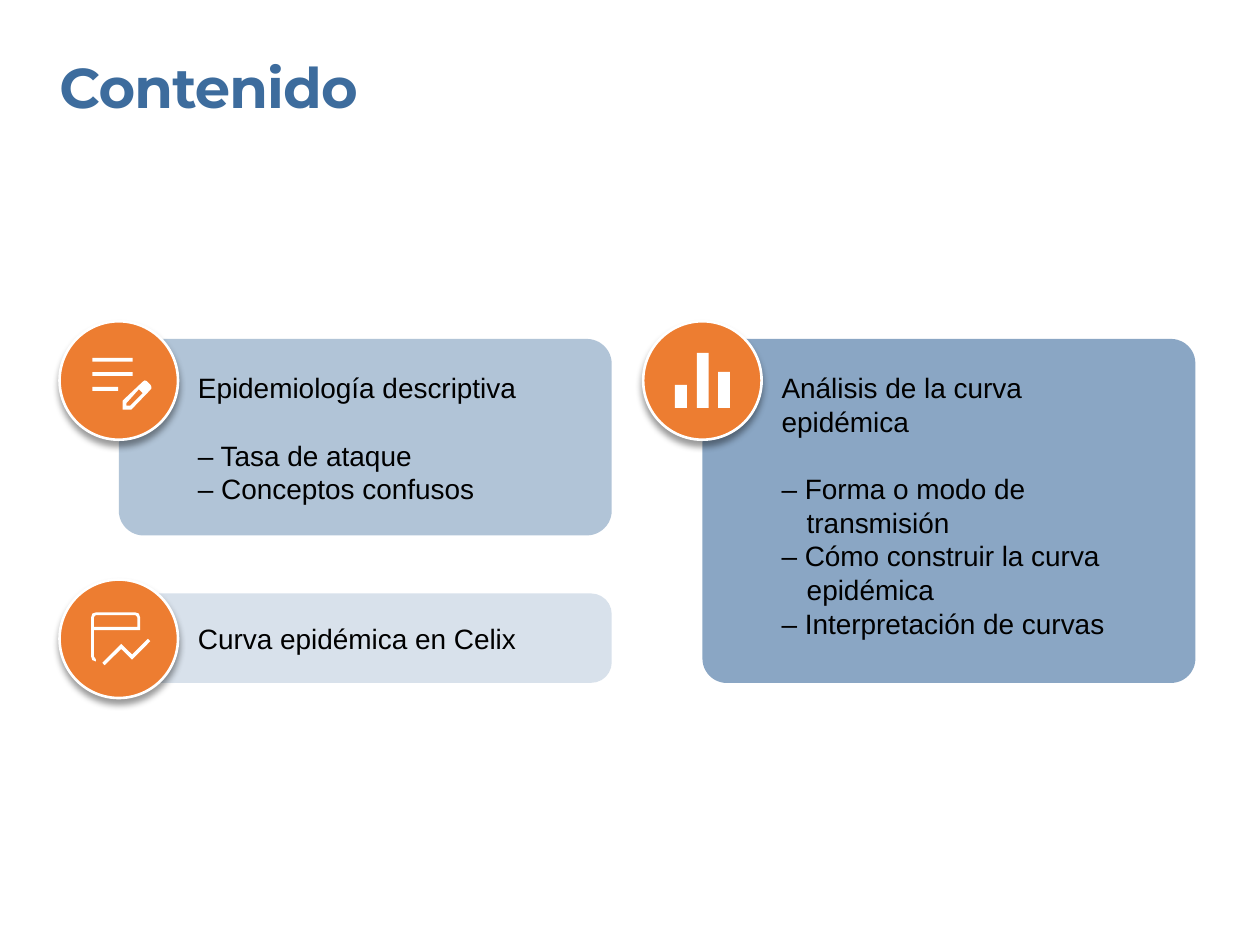
from pptx import Presentation
from pptx.dml.color import RGBColor
from pptx.enum.shapes import MSO_SHAPE
from pptx.enum.text import MSO_ANCHOR, MSO_AUTO_SIZE, PP_ALIGN
from pptx.oxml import parse_xml
from pptx.oxml.ns import nsdecls
from pptx.util import Pt

ROUND, OVAL = MSO_SHAPE.ROUNDED_RECTANGLE, MSO_SHAPE.OVAL
TOP, LEFT, FIXED = MSO_ANCHOR.TOP, PP_ALIGN.LEFT, MSO_AUTO_SIZE.NONE

THEME = {
    "blue": RGBColor(0x3D, 0x6C, 0x9D),
    "orange": RGBColor(0xED, 0x7D, 0x31),
    "white": RGBColor(255, 255, 255),
    "black": RGBColor(0, 0, 0),
    "head": ("Montserrat", 32),
    "text": ("Arial", 16),
}


def rect(left, top, right, bottom):
    return [(left, top), (right, top), (right, bottom), (left, bottom)]


# Icon outlines, in points from the centre of the disc
NOTES = [
    rect(-15.1, -13, 8, -10.8),
    rect(-15.1, -4.8, 8, -2.6),
    rect(-15.1, 3.7, -0.3, 5.9),
    [(2.2, 16.6), (2.2, 11.5), (13.7, 0.7), (14.8, 0), (15.8, 0.2),
     (16.6, 0.9), (18.2, 2.6), (18.7, 3.8), (18.6, 4.6), (18, 5.4),
     (7.2, 16.6)],
    [(4.3, 14.4), (6.5, 14.4), (13.7, 7.2), (11.5, 5), (4.3, 13)],
]
BARS = [
    rect(-15.7, 2.6, -8.9, 15.7),
    rect(-3.2, -15.7, 3.5, 15.7),
    rect(8.9, -4.9, 15.7, 15.7),
]
TREND = [
    [(-8.1, 15.1), (-9.4, 13.7), (1.4, 2.9), (7.6, 9), (16.6, 0),
     (18, 1.4), (7.6, 11.9), (1.4, 5.8)],
    [(-13, 13), (-15.1, 12.2), (-15.8, 10.1), (-15.8, -12.2),
     (-15.1, -14.4), (-13, -15.1), (9.4, -15.1), (11.5, -14.4),
     (12.2, -12.2), (12.2, -5), (-14.2, -5), (-14.2, 10.1),
     (-13.7, 10.8), (-13, 12)],
    [(-14.2, -6.8), (10.6, -6.8), (10.6, -12.2), (10.1, -13.1),
     (9.4, -13.5), (-13, -13.5), (-13.7, -13.1), (-14.2, -12.2)],
]

TITLE = "Contenido"
# column, top, height, corner, opacity %, disc top, text top, text width
CARDS = [
    {"head": "Epidemiología descriptiva",
     "list": ["Tasa de ataque", "Conceptos confusos"],
     "icon": NOTES, "place": (0, 193.7, 112.3, 0.127, 40, 183.6, 212, 217)},
    {"head": "Curva epidémica en Celix", "list": [],
     "icon": TREND, "place": (0, 339.1, 51.1, 0.231, 20, 331.2, 355.2, 217)},
    {"head": "Análisis de la curva epidémica",
     "list": ["Forma o modo de transmisión",
              "Cómo construir la curva epidémica",
              "Interpretación de curvas"],
     "icon": BARS, "place": (1, 193.7, 196.6, 0.071, 60, 183.6, 212, 210)},
]
EDGE, STEP, WIDE, DISC = 67.9, 333.5, 281.7, 67.7
PAD, LINE, HANG = 45.2, 19.2, 14.4


def paint(shape, color):
    shape.shadow.inherit = False
    shape.fill.solid()
    shape.fill.fore_color.rgb = color
    shape.line.fill.background()


def fade(shape, cent):
    """Set the opacity of a solid fill, in percent."""
    tint = shape.fill._xPr.find(".//{*}srgbClr")
    tint.append(parse_xml(f'<a:alpha {nsdecls("a")} val="{cent * 1000}"/>'))


def cast(shape):
    """Give a shape a soft shadow straight below it."""
    glow = shape._element.spPr.find("{*}effectLst")
    glow.append(parse_xml(
        f'<a:outerShdw {nsdecls("a")} blurRad="{Pt(4)}" dist="{Pt(3)}" '
        'dir="5400000" algn="ctr" rotWithShape="0"><a:srgbClr val="000000">'
        '<a:alpha val="40000"/></a:srgbClr></a:outerShdw>'))


def draw_icon(slide, loops, x, y):
    pen = None
    for loop in loops:
        dots = [(round(a * 10), round(b * 10)) for a, b in loop]
        if pen is None:
            pen = slide.shapes.build_freeform(*dots[0], scale=Pt(0.1))
        else:
            pen.move_to(*dots[0])
        pen.add_line_segments(dots[1:], close=True)
    paint(pen.convert_to_shape(Pt(x), Pt(y)), THEME["white"])


def place(slide, box, left, top, width, height):
    """Bring a placeholder to the front and give it a plain frame."""
    slide.shapes._spTree.append(box._element)
    box.left, box.top = Pt(left), Pt(top)
    box.width, box.height = Pt(width), Pt(height)
    frame = box.text_frame
    frame.word_wrap, frame.auto_size = True, FIXED
    frame.vertical_anchor = TOP
    frame.margin_left = frame.margin_right = 0
    frame.margin_top = frame.margin_bottom = 0
    return frame


def style(para, kind, color, bold):
    para.alignment = LEFT
    para.space_before = para.space_after = Pt(0)
    name, size = THEME[kind]
    font = para.font
    font.name, font.size, font.bold = name, Pt(size), bold
    font.color.rgb = THEME[color]


def write(frame, head, items):
    for i, text in enumerate([head] + [f"– {item}" for item in items]):
        para = frame.paragraphs[0] if i == 0 else frame.add_paragraph()
        para.text = text
        prop = para._p.get_or_add_pPr()
        hang = Pt(HANG) if i else 0
        prop.set("marL", str(hang))
        prop.set("indent", str(-hang))
        prop.append(parse_xml(f'<a:buNone {nsdecls("a")}/>'))
        style(para, "text", "black", False)
        para.line_spacing = Pt(LINE)
        if i == 1:
            para.space_before = Pt(LINE)


def draw_card(slide, card, box):
    col, top, high, bend, cent, rise, start, span = card["place"]
    left = EDGE + col * STEP
    back = slide.shapes.add_shape(ROUND, Pt(left), Pt(top), Pt(WIDE), Pt(high))
    back.adjustments[0] = bend
    paint(back, THEME["blue"])
    fade(back, cent)

    frame = place(slide, box, left + PAD, start, span, high - 2 * (start - top))
    write(frame, card["head"], card["list"])

    disc = slide.shapes.add_shape(
        OVAL, Pt(left - DISC / 2), Pt(rise), Pt(DISC), Pt(DISC))
    paint(disc, THEME["orange"])
    disc.line.color.rgb = THEME["white"]
    disc.line.width = Pt(1.5)
    cast(disc)
    draw_icon(slide, card["icon"], left, rise + DISC / 2)


def main():
    deck = Presentation()
    deck.slide_width, deck.slide_height = Pt(720), Pt(540)
    slide = deck.slides.add_slide(deck.slide_layouts[4])
    title, *boxes = list(slide.placeholders)

    frame = place(slide, title, EDGE / 2, 30.2, 615.6, 39)
    frame.text = TITLE
    para = frame.paragraphs[0]
    style(para, "head", "blue", True)
    para.runs[0]._r.get_or_add_rPr().set("spc", "-50")

    for card, box in zip(CARDS, boxes):
        draw_card(slide, card, box)
    for box in boxes[len(CARDS):]:
        box._element.getparent().remove(box._element)
    deck.save("out.pptx")


if __name__ == "__main__":
    main()
